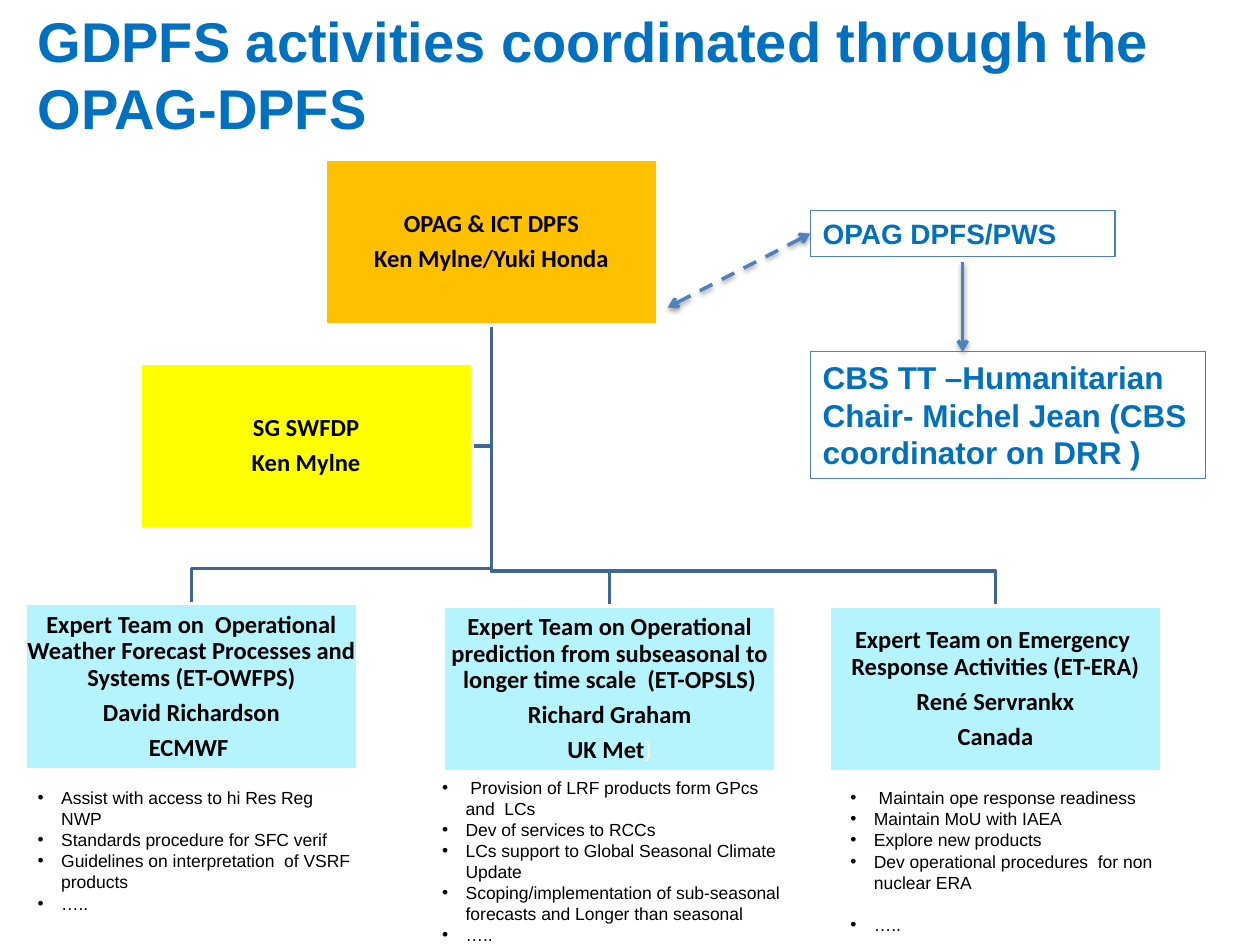
from lxml.etree import SubElement
from pptx import Presentation
from pptx.dml.color import RGBColor
from pptx.enum.dml import MSO_LINE
from pptx.enum.shapes import MSO_CONNECTOR, MSO_SHAPE
from pptx.enum.text import MSO_ANCHOR, PP_ALIGN
from pptx.oxml.ns import qn
from pptx.util import Pt

COLORS = {
    "title": "0070C0", "outline": "4F81BD", "branch": "3F6797",
    "chief": "FFC000", "group": "FFFF00", "team": "B5F4FD",
    "black": "000000", "white": "FFFFFF",
}
BOX_WIDTH, BOX_HEIGHT = 190, 95
CHIEF = (185.8, 90.7)
SUBGROUP = (79.9, 207.4)
TEAMS = [
    ((14.4, 344.9), ["Expert Team on  Operational Weather Forecast Processes and Systems (ET-OWFPS)",
                     "David Richardson", "ECMWF "]),
    ((253.4, 346.3), ["Expert Team on Operational prediction from subseasonal to longer time scale  (ET-OPSLS)",
                      "Richard Graham", "UK Met"]),
    ((473.8, 346.3), ["Expert Team on Emergency  Response Activities (ET-ERA)",
                      "René Servrankx", "Canada"]),
]
TASKS = [
    ((14.4, 446.4, 195, 80), 0,
     ["Assist with access to hi Res Reg NWP", "Standards procedure for SFC verif",
      "Guidelines on interpretation  of VSRF products", "….."]),
    ((245.5, 440.6, 209.5, 104.4), 0,
     [" Provision of LRF products form GPcs and  LCs", "Dev of services to RCCs",
      "LCs support to Global Seasonal Climate Update",
      "Scoping/implementation of sub-seasonal forecasts and Longer than seasonal", "….."]),
    ((478.8, 446.4, 195, 92.2), 12,
     [" Maintain ope response readiness", "Maintain MoU with IAEA", "Explore new products",
      "Dev operational procedures  for non nuclear ERA", "….."]),
]


def color(name):
    return RGBColor.from_string(COLORS[name])


def add_run(paragraph, text, size, color_name, font="Arial", bold=True):
    run = paragraph.add_run()
    run.text = text
    run.font.name = font
    run.font.size = Pt(size)
    run.font.bold = bold
    run.font.color.rgb = color(color_name)


def add_paragraphs(frame, lines, size, color_name, font="Arial", bold=True):
    frame.word_wrap = True
    for index, line in enumerate(lines):
        paragraph = frame.add_paragraph() if index else frame.paragraphs[0]
        paragraph.alignment = PP_ALIGN.LEFT
        add_run(paragraph, line, size, color_name, font, bold)
    return frame.paragraphs


def add_text(slide, box, lines, size, color_name, bold=True):
    frame = slide.shapes.add_textbox(*map(Pt, box)).text_frame
    return add_paragraphs(frame, lines, size, color_name, bold=bold)


def add_rectangle(slide, box, fill, line, line_width):
    shape = slide.shapes.add_shape(MSO_SHAPE.RECTANGLE, *map(Pt, box))
    shape.shadow.inherit = False
    if fill:
        shape.fill.solid()
        shape.fill.fore_color.rgb = color(fill)
    else:
        shape.fill.background()
    shape.line.color.rgb = color(line)
    shape.line.width = Pt(line_width)
    return shape


def add_unit(slide, corner, fill, lines):
    shape = add_rectangle(slide, (*corner, BOX_WIDTH, BOX_HEIGHT), fill, "white", 2)
    frame = shape.text_frame
    frame.vertical_anchor = MSO_ANCHOR.MIDDLE
    frame.margin_left = frame.margin_right = Pt(0.7)
    frame.margin_top = frame.margin_bottom = Pt(0.7)
    paragraphs = add_paragraphs(frame, lines, 14, "black", "Calibri")
    for paragraph in paragraphs:
        paragraph.alignment = PP_ALIGN.CENTER
        paragraph.line_spacing = 0.9
        paragraph.space_after = Pt(4.9)
    return paragraphs


def add_branch(slide, points):
    (left, top), *rest = [(Pt(x), Pt(y)) for x, y in points]
    builder = slide.shapes.build_freeform(left, top)
    builder.add_line_segments(rest, close=False)
    shape = builder.convert_to_shape()
    shape.shadow.inherit = False
    shape.fill.background()
    shape.line.color.rgb = color("branch")
    shape.line.width = Pt(2)


def add_hierarchy(slide):
    trunk = CHIEF[0] + BOX_WIDTH / 2
    start = (trunk, CHIEF[1] + BOX_HEIGHT)
    side = SUBGROUP[1] + BOX_HEIGHT / 2
    add_branch(slide, [start, (trunk, side), (SUBGROUP[0] + BOX_WIDTH, side)])
    for (left, top), _ in reversed(TEAMS):
        center, bend = left + BOX_WIDTH / 2, top - 20
        add_branch(slide, [start, (trunk, bend), (center, bend), (center, top)])

    add_unit(slide, CHIEF, "chief", ["OPAG & ICT DPFS", "Ken Mylne/Yuki Honda"])
    units = [add_unit(slide, corner, "team", lines) for corner, lines in TEAMS]
    add_run(units[1][-1], ")", 14, "white", "Calibri", False)
    add_unit(slide, SUBGROUP, "group", ["SG SWFDP", "Ken Mylne"])


def add_arrow(slide, start, end, dashed=False):
    connector = slide.shapes.add_connector(MSO_CONNECTOR.STRAIGHT, *map(Pt, (*start, *end)))
    connector.line.color.rgb = color("outline")
    connector.line.width = Pt(2)
    if dashed:
        connector.line.dash_style = MSO_LINE.DASH
    outline = connector.line._get_or_add_ln()
    for tag in ["a:headEnd", "a:tailEnd"] if dashed else ["a:tailEnd"]:
        SubElement(outline, qn(tag), type="arrow")
    effects = SubElement(connector._element.spPr, qn("a:effectLst"))
    shadow = SubElement(effects, qn("a:outerShdw"), blurRad=str(Pt(3.1)), dist=str(Pt(1.6)),
                        dir="5400000", rotWithShape="0")
    shade = SubElement(shadow, qn("a:srgbClr"), val=COLORS["black"])
    SubElement(shade, qn("a:alpha"), val="38000")
    return connector


def add_partner(slide, box, lines, size):
    shape = add_rectangle(slide, box, None, "outline", 0.75)
    shape.text_frame.vertical_anchor = MSO_ANCHOR.TOP
    add_paragraphs(shape.text_frame, lines, size, "title")
    return shape


def add_partners(slide):
    services = add_partner(slide, (463, 120.2, 174.2, 26.6), ["OPAG DPFS/PWS"], 16)
    add_arrow(slide, (550.1, 149.8), (550.1, 200.9))
    add_partner(slide, (463, 200.9, 226.1, 72.7),
                ["CBS TT –Humanitarian", "Chair- Michel Jean (CBS coordinator on DRR )"], 18)
    link = add_arrow(slide, (381.6, 175.7), (463, 133.5), dashed=True)
    link.end_connect(services, 1)


def add_tasks(slide, box, last_gap, lines):
    paragraphs = add_text(slide, box, lines, 10, "black", False)
    for paragraph in paragraphs:
        properties = paragraph._p.get_or_add_pPr()
        properties.set("marL", str(Pt(13.5)))
        properties.set("indent", str(-Pt(13.5)))
        SubElement(properties, qn("a:buFont"), typeface="Arial")
        SubElement(properties, qn("a:buChar"), char="•")
    if last_gap:
        paragraphs[-1].space_before = Pt(last_gap)


def main():
    presentation = Presentation()
    presentation.slide_width, presentation.slide_height = Pt(720), Pt(540)
    slide = presentation.slides.add_slide(presentation.slide_layouts[6])
    add_hierarchy(slide)
    add_text(slide, (14.4, 0, 687.6, 85),
             ["GDPFS activities coordinated through the OPAG-DPFS"], 32, "title")
    add_partners(slide)
    for box, last_gap, lines in TASKS:
        add_tasks(slide, box, last_gap, lines)
    presentation.save("out.pptx")


if __name__ == "__main__":
    main()
